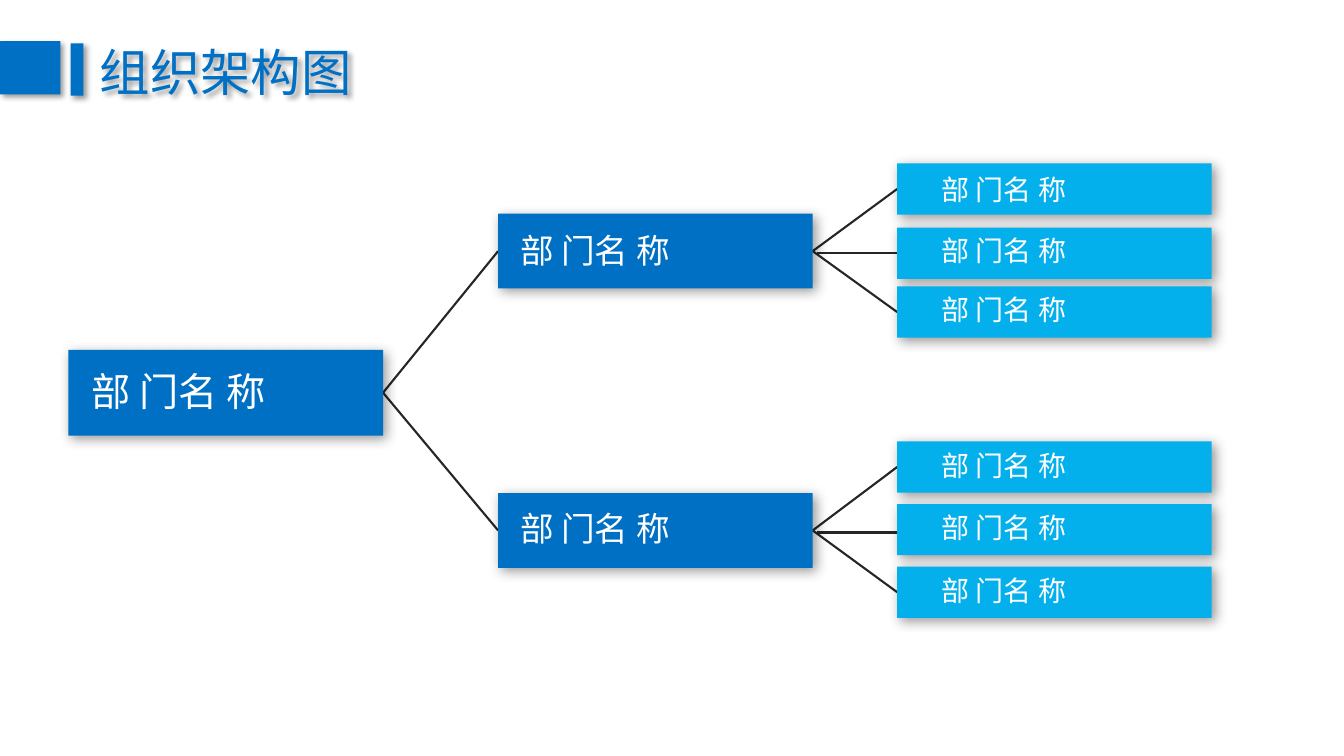
from dataclasses import dataclass

from lxml import etree
from pptx import Presentation
from pptx.dml.color import RGBColor
from pptx.enum.shapes import MSO_CONNECTOR, MSO_SHAPE
from pptx.enum.text import MSO_AUTO_SIZE
from pptx.oxml.ns import qn
from pptx.util import Inches, Pt

RECTANGLE = MSO_SHAPE.RECTANGLE
STRAIGHT = MSO_CONNECTOR.STRAIGHT
GROW = MSO_AUTO_SIZE.SHAPE_TO_FIT_TEXT

# The slide is a grid of 32 columns by 18 rows of square cells
SLIDE_WIDTH, SLIDE_HEIGHT = Inches(13.333), Inches(7.5)
ROWS = 18
CELL = SLIDE_HEIGHT / ROWS


@dataclass(frozen=True)
class Theme:
    dark_blue: str = "0070C4"
    light_blue: str = "03B0EB"
    white: str = "FFFFFF"
    line: str = "262626"
    shadow: str = "000000"
    font: str = "Noto Sans CJK SC"
    title_size: int = 36
    root_size: int = 28
    branch_size: int = 24
    leaf_size: int = 20
    line_width: float = 1.5
    title_blur: int = 4
    node_blur: int = 9


THEME = Theme()


@dataclass(frozen=True)
class Box:
    left: float
    top: float
    width: float
    height: float

    @property
    def right(self) -> float:
        return self.left + self.width

    @property
    def middle(self) -> float:
        return self.top + self.height / 2


@dataclass(frozen=True)
class Level:
    left: float
    height: float
    fill: str
    size: int
    label_indent: float
    label_width: float
    label_height: float


@dataclass(frozen=True)
class Node:
    level: Level
    top: float
    label_drop: float
    children: tuple["Node", ...] = ()

    @property
    def box(self) -> Box:
        return Box(self.level.left, self.top, NODE_WIDTH, self.level.height)


# Organisation tree
NODE_WIDTH = 7.49
NODE_LABEL = "部 门名 称"
ROOT = Level(1.63, 2.04, THEME.dark_blue, THEME.root_size, 0.31, 6.89, 1.37)
BRANCH = Level(11.86, 1.78, THEME.dark_blue, THEME.branch_size, 0.29, 6.82, 1.2)
LEAF = Level(21.36, 1.22, THEME.light_blue, THEME.leaf_size, 0.82, 5.86, 1.06)

UPPER_BRANCH = Node(BRANCH, 5.09, 0.26, (
    Node(LEAF, 3.89, 0.1), Node(LEAF, 5.42, 0.03), Node(LEAF, 6.82, 0.03)))
LOWER_BRANCH = Node(BRANCH, 11.74, 0.24, (
    Node(LEAF, 10.51, 0.05), Node(LEAF, 12, 0.03), Node(LEAF, 13.49, 0.05)))
TREE = Node(ROOT, 8.33, 0.29, (UPPER_BRANCH, LOWER_BRANCH))

# Title
TITLE = "组织架构图"
TITLE_BOX = Box(2.14, 0.86, 6.55, 1.7)
TITLE_BARS = (Box(0, 0.98, 1.44, 1.27), Box(1.68, 1.03, 0.31, 1.25))


def cells(*counts: float) -> list[int]:
    return [round(count * CELL) for count in counts]


def place(box: Box) -> list[int]:
    return cells(box.left, box.top, box.width, box.height)


def add_shadow(shape, blur: int) -> None:
    shape.shadow.inherit = False
    effects = shape._element.spPr.find(qn("a:effectLst"))
    shadow = etree.SubElement(
        effects, qn("a:outerShdw"), blurRad=str(Pt(blur)), dist=str(Pt(3)),
        dir=str(45 * 60000), algn="tl", rotWithShape="0")
    color = etree.SubElement(shadow, qn("a:srgbClr"), val=THEME.shadow)
    etree.SubElement(color, qn("a:alpha"), val="40000")


def add_block(slide, box: Box, fill: str, blur: int) -> None:
    shape = slide.shapes.add_shape(RECTANGLE, *place(box))
    shape.fill.solid()
    shape.fill.fore_color.rgb = RGBColor.from_string(fill)
    shape.line.fill.background()
    add_shadow(shape, blur)


def add_text(slide, text: str, box: Box, *, size: int, color: str,
             wrap: bool = True):
    text_box = slide.shapes.add_textbox(*place(box))
    text_box.text_frame.word_wrap = wrap
    text_box.text_frame.auto_size = GROW
    run = text_box.text_frame.paragraphs[0].add_run()
    run.text = text
    run.font.name = THEME.font
    run.font.size = Pt(size)
    run.font.color.rgb = RGBColor.from_string(color)
    properties = run.font._element
    etree.SubElement(properties, qn("a:ea"), typeface=THEME.font)
    return text_box


def add_line(slide, start: tuple[float, float], end: tuple[float, float]) -> None:
    connector = slide.shapes.add_connector(STRAIGHT, *cells(*start, *end))
    connector.line.color.rgb = RGBColor.from_string(THEME.line)
    connector.line.width = Pt(THEME.line_width)
    etree.SubElement(connector._element.spPr, qn("a:effectLst"))


def draw_links(slide, node: Node) -> None:
    start = (node.box.right, node.box.middle)
    for index, child in enumerate(node.children):
        if len(node.children) == 3 and index == 1:
            # The middle link runs level, just below the fan's origin
            level = node.box.middle + 0.05
            add_line(slide, (node.box.right + 0.1, level),
                     (child.box.left + 0.1, level))
        else:
            add_line(slide, start, (child.box.left, child.box.middle))
        draw_links(slide, child)


def draw_nodes(slide, node: Node) -> None:
    level = node.level
    add_block(slide, node.box, level.fill, THEME.node_blur)
    label_box = Box(level.left + level.label_indent, node.top + node.label_drop,
                    level.label_width, level.label_height)
    add_text(slide, NODE_LABEL, label_box, size=level.size, color=THEME.white)
    for child in node.children:
        draw_nodes(slide, child)


def main() -> None:
    presentation = Presentation()
    presentation.slide_width, presentation.slide_height = SLIDE_WIDTH, SLIDE_HEIGHT
    slide = presentation.slides.add_slide(presentation.slide_layouts[6])

    # Title with its bars
    title = add_text(slide, TITLE, TITLE_BOX, size=THEME.title_size,
                     color=THEME.dark_blue, wrap=False)
    add_shadow(title, THEME.title_blur)
    for bar in TITLE_BARS:
        add_block(slide, bar, THEME.dark_blue, THEME.title_blur)

    # Chart, with the links behind the nodes
    draw_links(slide, TREE)
    draw_nodes(slide, TREE)
    presentation.save("out.pptx")


if __name__ == "__main__":
    main()
